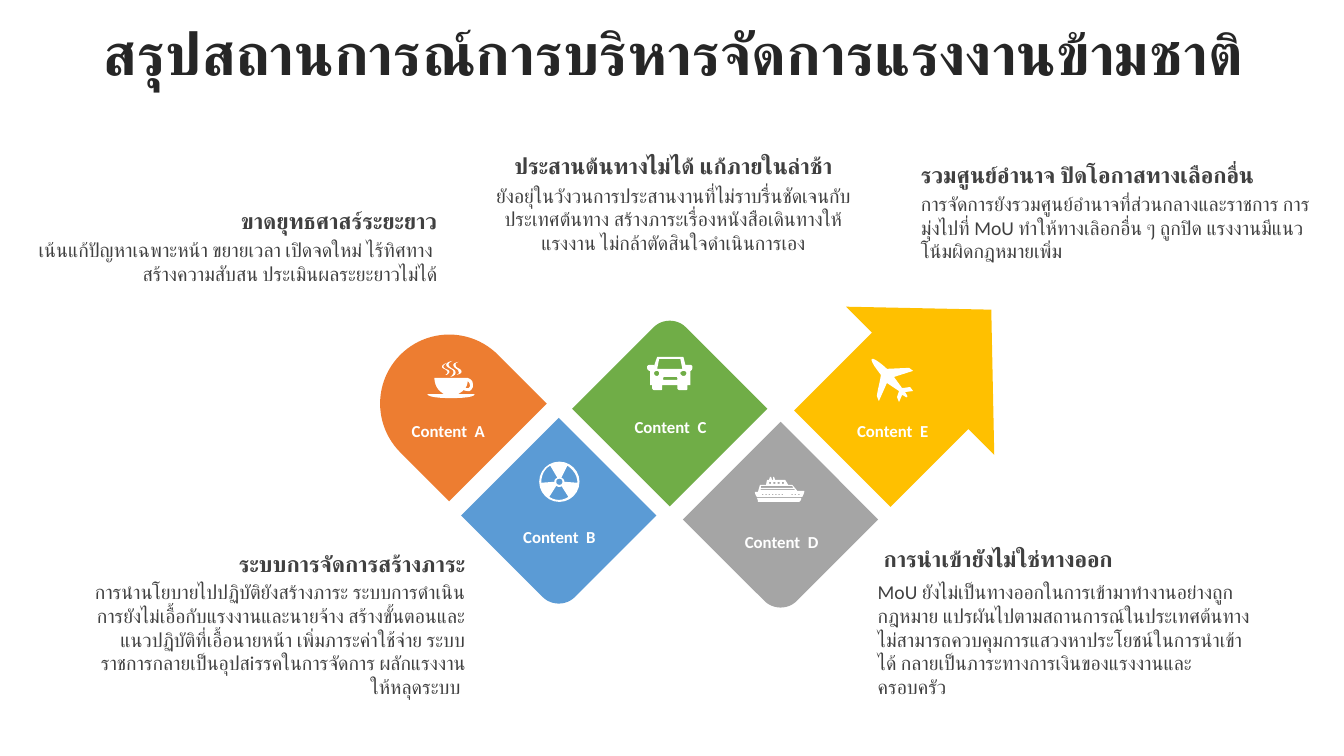
from dataclasses import dataclass

from lxml.etree import SubElement
from pptx import Presentation
from pptx.dml.color import RGBColor
from pptx.enum.shapes import MSO_SHAPE as Preset
from pptx.enum.text import MSO_ANCHOR as Anchor, MSO_AUTO_SIZE as AutoSize, PP_ALIGN as Align
from pptx.oxml.ns import qn
from pptx.util import Cm, Pt

FONT = "Calibri"
COLOURS = {"title": "262626", "text": "404040", "white": "FFFFFF", "orange": "ED7D31",
           "blue": "5B9BD5", "green": "70AD47", "grey": "A5A5A5", "gold": "FFC000"}
TILE = 3.48
LABEL_LEFT, LABEL_PITCH = 10.03, 2.8
ICON_UNIT = Cm(2.54) / 100
CURVE_STEPS = 6


@dataclass
class Step:
    letter: str
    colour: str
    preset: Preset
    left: float
    top: float
    rotation: int
    label_top: float
    icon: tuple[str, ...]
    width: float = TILE
    height: float = TILE
    adjustments: tuple[float, ...] = ()


@dataclass
class Panel:
    heading: str
    body: str
    align: Align
    left: float
    width: float
    heading_top: float
    body_top: float
    body_height: float
    heading_height: float = 1.22
    heading_indent: float = 0


def box_outline(left: float, top: float, width: float, height: float) -> str:
    right, bottom = left + width, top + height
    return f"{left} {top} L {left} {bottom} L {right} {bottom} L {right} {top}"


CUP = (
    "464 378 C 464 381 463 383 462 385 C 463 385 464 385 465 385 C 466 384 467 383 466 381 C 466 380 465 379 464 378",
    "464 375 C 467 376 469 378 469 380 C 470 383 469 386 466 388 C 464 388 462 388 460 387 C 459 388 458 389 456 390 "
    "C 455 391 454 391 453 391 L 471 391 C 471 394 460 395 448 395 C 435 395 425 394 424 391 L 443 391 "
    "C 441 391 440 391 439 390 C 434 387 431 381 431 375",
    "443 360 C 441 362 440 362 440 364 C 441 367 446 366 446 369 C 445 371 444 372 442 372 "
    "C 443 371 444 371 444 369 C 444 367 440 366 439 365 C 438 363 439 362 443 360",
    "455 359 C 453 360 452 360 452 362 C 452 366 458 365 458 369 C 457 371 456 371 453 372 "
    "C 455 371 456 370 455 369 C 455 366 451 366 450 363 C 449 361 451 360 455 359",
    "449 358 C 447 359 445 360 445 362 C 446 366 453 366 452 370 C 452 372 450 373 447 374 "
    "C 449 372 450 371 450 369 C 450 366 445 366 443 363 C 442 361 444 359 449 358",
)
RADIATION = (
    "552 482 L 545 493 C 551 497 558 497 564 493 L 557 482 C 557 483 556 483 555 483 C 554 483 553 483 552 482",
    "555 475 C 553 475 552 476 552 478 C 552 480 553 481 555 481 C 557 481 558 480 558 478 C 558 476 557 475 555 475",
    "563 462 L 557 474 C 559 475 560 476 560 478 L 573 479 C 573 472 569 466 563 462",
    "546 462 C 540 465 537 472 537 479 L 550 478 C 550 476 551 475 553 474",
    "555 458 C 566 458 575 467 575 478 C 575 489 566 498 555 498 C 544 498 535 489 535 478 C 535 467 544 458 555 458",
)
CAR = (
    "659 374 C 658 374 658 375 658 376 C 658 377 658 377 659 377 L 671 377 C 672 377 672 377 672 376 "
    "C 672 375 672 374 671 374",
    "678 368 C 677 368 675 369 675 370 C 675 372 677 373 678 373 C 680 373 681 372 681 370 C 681 369 680 368 678 368",
    "652 368 C 650 368 649 369 649 370 C 649 372 650 373 652 373 C 653 373 654 372 654 370 C 654 369 653 368 652 368",
    "654 356 L 652 366 L 677 366 L 675 356",
    "652 354 L 678 354 L 680 362 L 685 362 C 686 362 687 363 687 364 L 687 365 C 687 366 686 368 685 368 L 685 382 "
    "L 682 382 L 682 385 C 682 386 682 387 681 387 L 674 387 C 673 387 672 386 672 385 L 672 382 L 657 382 L 657 385 "
    "C 657 386 657 387 656 387 L 649 387 C 648 387 647 386 647 385 L 647 382 L 645 382 L 645 368 "
    "C 643 368 642 366 642 365 L 642 364 C 642 363 643 362 645 362 L 648 362 C 648 362 649 362 649 363",
)
SHIP = (
    "751 494 L 795 494 C 795 496 794 497 793 498 L 752 498 C 752 497 752 496 751 494",
    "755 485 L 754 486 L 789 486 L 788 485",
    "755 482 L 755 484 L 787 484 L 786 482",
    "767 473 L 768 473 L 769 476 L 779 476 L 782 481 L 786 481 L 791 487 L 798 487 C 798 489 797 491 796 493 "
    "L 751 493 C 750 492 749 490 749 488 L 752 488 L 754 481 L 760 481 L 761 476 L 763 476 L 764 473 L 765 473 "
    "L 766 476 L 767 476",
    *(box_outline(756 + 3.25 * i, 490, 1.5, 1) for i in (*range(7), 9, 10, 11)),
    *(box_outline(763 + 4.25 * i, 478, 2, 2) for i in range(4)),
)
PLANE = (
    "906 388 L 898 389 C 899 391 901 393 900 394 C 899 395 897 392 895 392 L 892 399 L 890 394 L 892 388 L 880 380 "
    "L 872 398 L 870 393 C 871 385 873 380 874 372 C 871 368 863 358 865 356 C 867 355 876 362 880 366 "
    "L 902 365 L 906 368 L 887 374 L 895 385 C 897 385 903 384 903 384",
)

STEPS = [
    Step("A", "orange", Preset.ROUND_2_SAME_RECTANGLE, 9.58, 8.43, 315, 10.21, CUP, adjustments=(0.5, 0)),
    Step("B", "blue", Preset.ROUND_1_RECTANGLE, 12.34, 11.25, 135, 12.88, RADIATION),
    Step("C", "green", Preset.ROUND_1_RECTANGLE, 15.14, 8.56, 315, 10.13, CAR),
    Step("D", "grey", Preset.ROUND_1_RECTANGLE, 17.93, 11.35, 135, 13.03, SHIP),
    Step("E", "gold", Preset.RIGHT_ARROW, 20.45, 7.04, 315, 10.21, PLANE, 5.31, 5.28, (0.65, 0.48)),
]
PANELS = [
    Panel("การนำเข้ายังไม่ใช่ทางออก",
          "MoU ยังไม่เป็นทางออกในการเข้ามาทำงานอย่างถูกกฎหมาย แปรผันไปตามสถานการณ์ในประเทศต้นทาง "
          "ไม่สามารถควบคุมการแสวงหาประโยชน์ในการนำเข้าได้ กลายเป็นภาระทางการเงินของแรงงานและครอบครัว",
          Align.LEFT, 21.87, 10.13, 13.46, 14.5, 4.45, heading_indent=0.15),
    Panel("ระบบการจัดการสร้างภาระ",
          "การนำนโยบายไปปฏิบัติยังสร้างภาระ ระบบการดำเนินการยังไม่เอื้อกับแรงงานและนายจ้าง "
          "สร้างขั้นตอนและแนวปฏิบัติที่เอื้อนายหน้า เพิ่มภาระค่าใช้จ่าย "
          "ระบบราชการกลายเป็นอุปสiรรคในการจัดการ ผลักแรงงานให้หลุดระบบ ",
          Align.RIGHT, 1.96, 10.01, 13.59, 14.5, 4.45),
    Panel("ขาดยุทธศาสร์ระยะยาว",
          "เน้นแก้ปัญหาเฉพาะหน้า ขยายเวลา เปิดจดใหม่ ไร้ทิศทาง  สร้างความสับสน ประเมินผลระยะยาวไม่ได้",
          Align.RIGHT, 0.53, 10.74, 4.95, 5.87, 2.77),
    Panel("ประสานต้นทางไม่ได้ แก้ภายในล่าช้า",
          "ยังอยุ่ในวังวนการประสานงานที่ไม่ราบรื่นชัดเจนกับประเทศต้นทาง "
          "สร้างภาระเรื่องหนังสือเดินทางให้แรงงาน ไม่กล้าตัดสินใจดำเนินการเอง",
          Align.CENTER, 12.17, 9.6, 3.56, 4.5, 3.61),
    Panel("รวมศูนย์อำนาจ ปิดโอกาสทางเลือกอื่น",
          "การจัดการยังรวมศูนย์อำนาจที่ส่วนกลางและราชการ การมุ่งไปที่ MoU "
          "ทำให้ทางเลิอกอื่น ๆ ถูกปิด แรงงานมีแนวโน้มผิดกฎหมายเพิ่ม",
          Align.LEFT, 22.96, 10.62, 3.33, 4.72, 2.77, heading_height=2.16),
]


def write(paragraph, text: str, size: float, colour: str, bold: bool, align: Align) -> None:
    paragraph.alignment = align
    run = paragraph.add_run()
    run.text = text
    run.font.name, run.font.size, run.font.bold = FONT, Pt(size), bold
    run.font.color.rgb = RGBColor.from_string(COLOURS[colour])
    SubElement(run.font._element, qn("a:cs")).set("typeface", FONT)


def add_text(shapes, text: str, left: float, top: float, width: float, height: float,
             size: float, colour: str, bold: bool, align: Align, anchor: Anchor) -> None:
    frame = shapes.add_textbox(Cm(left), Cm(top), Cm(width), Cm(height)).text_frame
    frame.word_wrap, frame.auto_size = True, AutoSize.SHAPE_TO_FIT_TEXT
    frame.vertical_anchor = anchor
    write(frame.paragraphs[0], text, size, colour, bold, align)


def paint(shape, colour: str) -> None:
    shape.shadow.inherit = False
    shape.fill.solid()
    shape.fill.fore_color.rgb = RGBColor.from_string(COLOURS[colour])
    shape.line.fill.background()


def contour_points(contour: str) -> list[tuple[float, ...]]:
    tokens = iter(contour.split())

    def next_point() -> tuple[float, ...]:
        return float(next(tokens)) * ICON_UNIT, float(next(tokens)) * ICON_UNIT

    points = [next_point()]
    for command in tokens:
        if command == "L":
            points.append(next_point())
            continue
        axes = list(zip(points[-1], next_point(), next_point(), next_point()))
        for t in (step / CURVE_STEPS for step in range(1, CURVE_STEPS + 1)):
            weights = (1 - t) ** 3, 3 * t * (1 - t) ** 2, 3 * t * t * (1 - t), t ** 3
            points.append(tuple(sum(w * value for w, value in zip(weights, axis)) for axis in axes))
    return points


def add_icon(shapes, icon: tuple[str, ...]) -> None:
    first, *others = map(contour_points, icon)
    builder = shapes.build_freeform(*first[0], scale=1.0)
    builder.add_line_segments(first[1:], close=True)
    for points in others:
        builder.move_to(*points[0])
        builder.add_line_segments(points[1:], close=True)
    paint(builder.convert_to_shape(), "white")


def add_step(shapes, step: Step) -> None:
    tile = shapes.add_shape(step.preset, Cm(step.left), Cm(step.top), Cm(step.width), Cm(step.height))
    tile.rotation = step.rotation
    for index, value in enumerate(step.adjustments):
        tile.adjustments[index] = value
    paint(tile, step.colour)


def add_panel(shapes, panel: Panel) -> None:
    add_text(shapes, panel.heading, panel.left + panel.heading_indent, panel.heading_top, panel.width,
             panel.heading_height, 16, "text", True, panel.align, Anchor.MIDDLE)
    add_text(shapes, panel.body, panel.left, panel.body_top, panel.width,
             panel.body_height, 14, "text", False, panel.align, Anchor.TOP)


def main() -> None:
    deck = Presentation()
    deck.slide_width, deck.slide_height = Cm(33.87), Cm(19.05)
    shapes = deck.slides.add_slide(deck.slide_layouts[5]).shapes
    title = shapes.title
    title.left, title.top, title.width, title.height = Cm(0.89), Cm(0.13), Cm(32.16), Cm(2.82)
    title.text_frame.vertical_anchor, title.text_frame.auto_size = Anchor.MIDDLE, AutoSize.NONE
    headline = title.text_frame.paragraphs[0]
    headline.line_spacing, headline.space_before = 0.7, Pt(10)
    write(headline, "สรุปสถานการณ์การบริหารจัดการแรงงานข้ามชาติ", 41.9, "title", True, Align.CENTER)
    for step in STEPS:
        add_step(shapes, step)
    for panel in PANELS:
        add_panel(shapes, panel)
    for index, step in enumerate(STEPS):
        add_text(shapes, f"Content  {step.letter}", LABEL_LEFT + index * LABEL_PITCH, step.label_top,
                 2.54, 1.27, 12, "white", True, Align.CENTER, Anchor.MIDDLE)
        add_icon(shapes, step.icon)
    deck.save("out.pptx")


if __name__ == "__main__":
    main()
